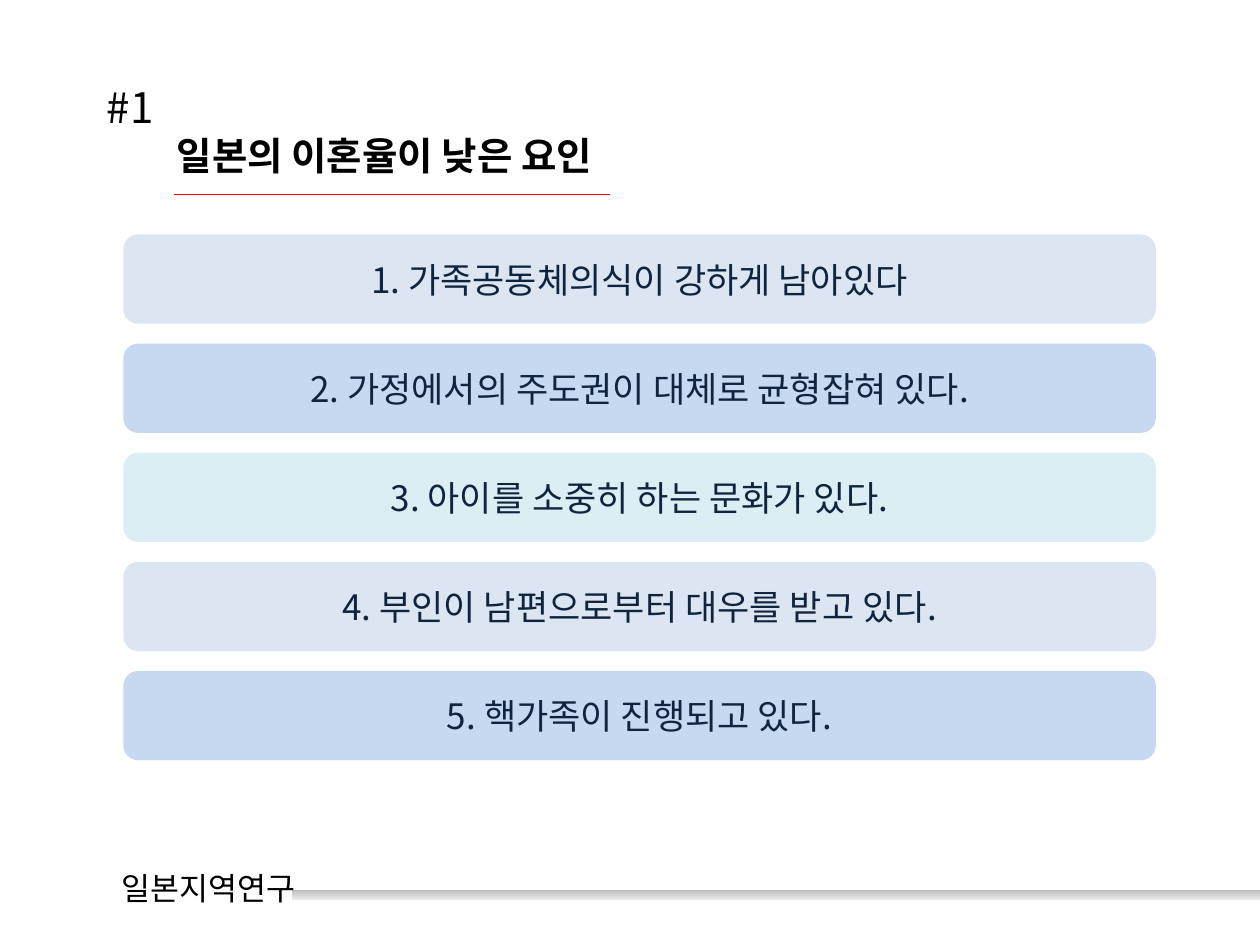
from copy import deepcopy

from lxml import etree
from pptx import Presentation
from pptx import util as u
from pptx.dml.color import RGBColor
from pptx.enum import shapes, text
from pptx.oxml.ns import qn

FONT = "Noto Sans CJK KR"
BLACK = RGBColor(0x00, 0x00, 0x00)
NAVY = RGBColor(0x0F, 0x24, 0x3E)
RED = RGBColor(0xFF, 0x00, 0x00)
BAR_FILLS = [RGBColor(0xDC, 0xE6, 0xF2), RGBColor(0xC6, 0xD9, 0xF1), RGBColor(0xDB, 0xEE, 0xF4)]
GREYS = [(0, RGBColor(0xB8, 0xB8, 0xB8)), (0.5, RGBColor(0xD3, 0xD3, 0xD3)), (1, RGBColor(0xE9, 0xE9, 0xE9))]

NUMBER = "#1"
TITLE = "일본의 이혼율이 낮은 요인"
FACTORS = [
    "1. 가족공동체의식이 강하게 남아있다",
    "2. 가정에서의 주도권이 대체로 균형잡혀 있다.",
    "3. 아이를 소중히 하는 문화가 있다.",
    "4. 부인이 남편으로부터 대우를 받고 있다.",
    "5. 핵가족이 진행되고 있다.",
]
COURSE = "일본지역연구"

BAR_LEFT, BAR_TOP, BAR_WIDTH, BAR_HEIGHT, BAR_STEP = 70.5, 134, 590, 51, 62.35
TITLE_INDENT = 40


def points(*lengths):
    return [u.Pt(length) for length in lengths]


def add_plain_shape(slide, kind, *box):
    """Add a shape without shadow, line or fill."""
    shape = slide.shapes.add_shape(kind, *points(*box))
    shape.shadow.inherit = False
    shape.line.fill.background()
    shape.fill.background()
    return shape


def write(paragraph, content, color=BLACK, alignment=text.PP_ALIGN.CENTER, **font_format):
    paragraph.alignment = alignment
    run = paragraph.add_run()
    run.text = content
    run.font.color.rgb = color
    for name, value in {"name": FONT, **font_format}.items():
        setattr(run.font, name, value)
    east_asian = etree.SubElement(run.font._element, qn("a:ea"))
    east_asian.set("typeface", FONT)


def add_footer(slide):
    strip = add_plain_shape(slide, shapes.MSO_SHAPE.RECTANGLE, 167, 508.3, 553, 5.8)
    strip.fill.gradient()
    strip.fill.gradient_angle = 270
    first_stop = strip._element.find(".//" + qn("a:gs"))
    first_stop.addnext(deepcopy(first_stop))
    for stop, (position, color) in zip(strip.fill.gradient_stops, GREYS):
        stop.position = position
        stop.color.rgb = color

    label = add_plain_shape(slide, shapes.MSO_SHAPE.ROUNDED_RECTANGLE, 54, 491, 130.3, 32.4)
    label.text_frame.word_wrap = False
    write(label.text_frame.paragraphs[0], COURSE, size=u.Pt(18))


def add_heading(slide):
    frame = slide.shapes.add_textbox(*points(54, 43.2, 453.6, 65.5)).text_frame
    frame.word_wrap = True
    write(frame.paragraphs[0], NUMBER, alignment=text.PP_ALIGN.LEFT, size=u.Pt(24))
    title = frame.add_paragraph()
    write(title, TITLE, alignment=text.PP_ALIGN.LEFT, size=u.Pt(22), bold=True)
    title._p.get_or_add_pPr().set("marL", str(u.Pt(TITLE_INDENT)))

    underline = slide.shapes.add_connector(
        shapes.MSO_CONNECTOR.STRAIGHT, *points(99.4, 111.3, 348.5, 111.3))
    underline.line.color.rgb = RED
    underline.line.width = u.Pt(0.75)
    etree.SubElement(underline._element.spPr, qn("a:effectLst"))


def add_factors(slide):
    for index, factor in enumerate(FACTORS):
        bar = add_plain_shape(slide, shapes.MSO_SHAPE.ROUNDED_RECTANGLE,
                              BAR_LEFT, BAR_TOP + index * BAR_STEP, BAR_WIDTH, BAR_HEIGHT)
        bar.fill.solid()
        bar.fill.fore_color.rgb = BAR_FILLS[index % len(BAR_FILLS)]
        bar.text_frame.vertical_anchor = text.MSO_ANCHOR.MIDDLE
        write(bar.text_frame.paragraphs[0], factor, NAVY, size=u.Pt(20))


def main():
    presentation = Presentation()
    presentation.slide_width, presentation.slide_height = points(720, 540)
    slide = presentation.slides.add_slide(presentation.slide_layouts[6])
    add_footer(slide)
    add_heading(slide)
    add_factors(slide)
    presentation.save("out.pptx")


if __name__ == "__main__":
    main()
